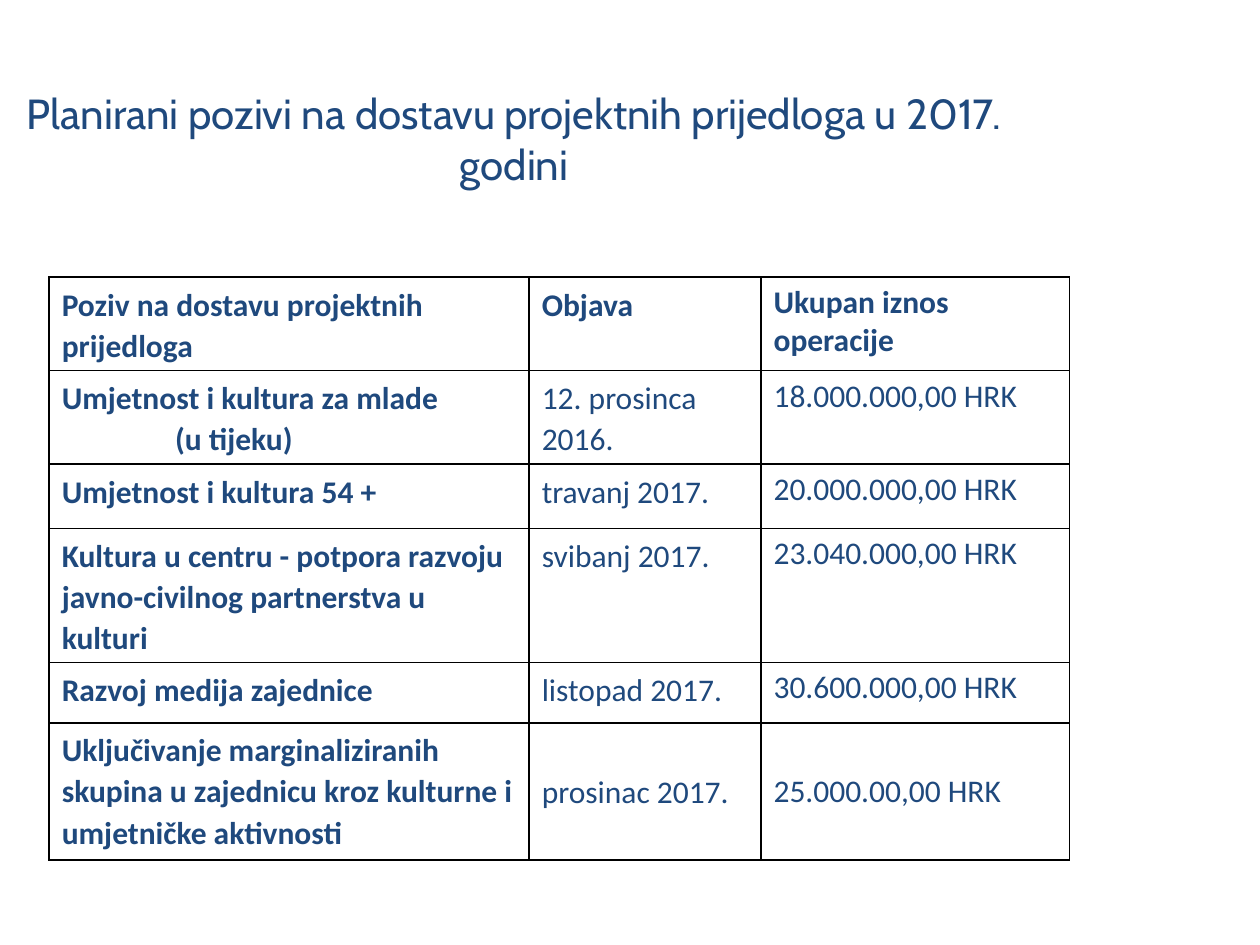
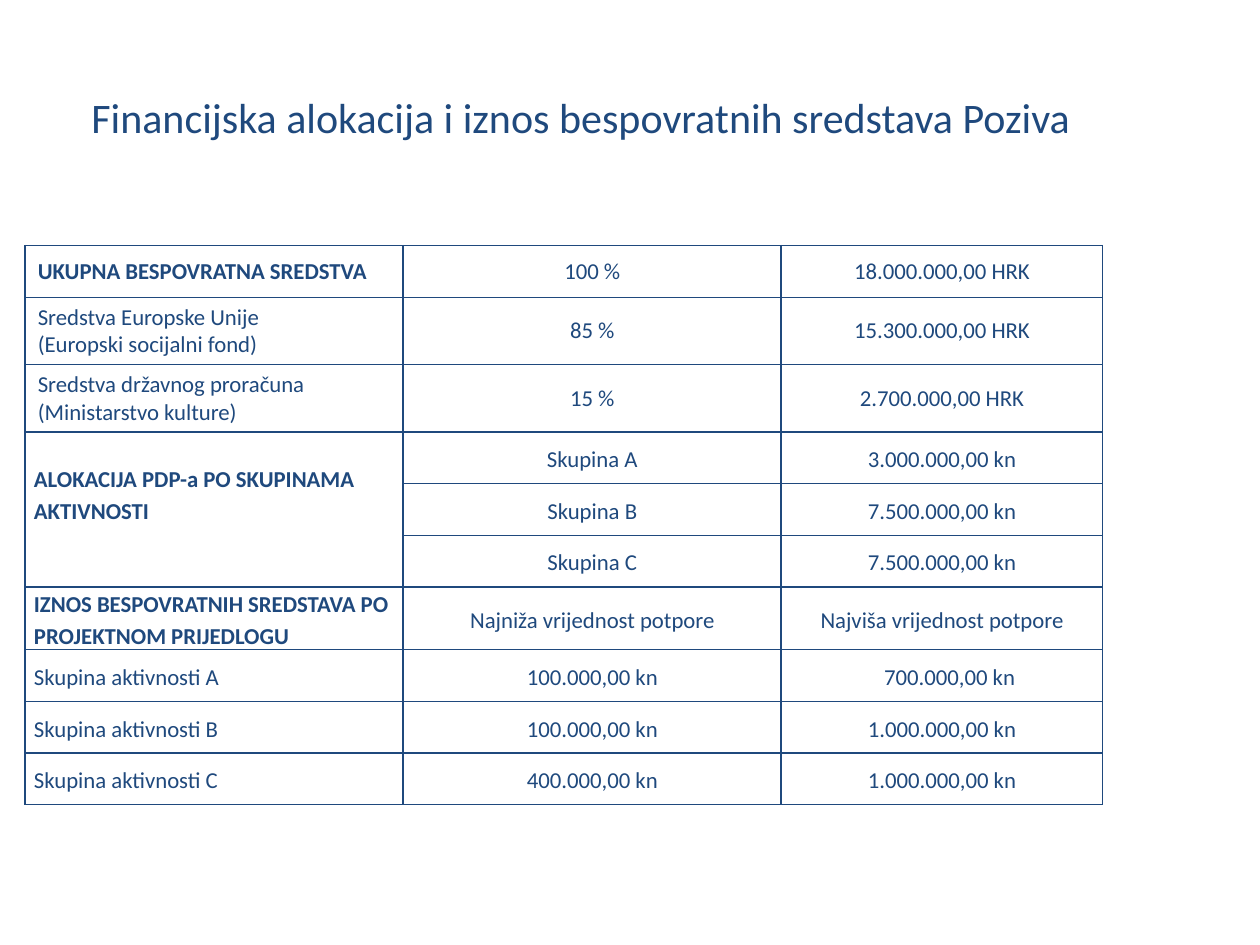
from lxml.etree import SubElement
from pptx import Presentation
from pptx.dml.color import RGBColor
from pptx.enum.text import MSO_ANCHOR as Anchor, PP_ALIGN as Align
from pptx.oxml.ns import qn
from pptx.util import Inches, Pt

COLORS = {"navy": "1F497D", "black": "000000", "white": "FFFFFF"}
GRID_COLUMNS, GRID_ROWS = 100, 75

CALLS = [
    ("Poziv na dostavu projektnih prijedloga", "Objava", "Ukupan iznos operacije"),
    ("Umjetnost i kultura za mlade\n(u tijeku)", "12. prosinca 2016.", "18.000.000,00 HRK"),
    ("Umjetnost i kultura 54 +", "travanj 2017.", "20.000.000,00 HRK"),
    ("Kultura u centru - potpora razvoju javno-civilnog partnerstva u kulturi",
     "svibanj 2017.", "23.040.000,00 HRK"),
    ("Razvoj medija zajednice", "listopad 2017.", "30.600.000,00 HRK"),
    ("Uključivanje marginaliziranih skupina u zajednicu kroz kulturne i umjetničke aktivnosti",
     "prosinac 2017.", "25.000.00,00 HRK"),
]
ALLOCATION = [
    ("UKUPNA BESPOVRATNA SREDSTVA", "100 %", "18.000.000,00 HRK"),
    ("Sredstva Europske Unije\n(Europski socijalni fond)", "85 %", "15.300.000,00 HRK"),
    ("Sredstva državnog proračuna\n(Ministarstvo kulture)", "15 %", "2.700.000,00 HRK"),
    ("ALOKACIJA PDP-a PO SKUPINAMA AKTIVNOSTI", "Skupina A", "3.000.000,00 kn"),
    ("", "Skupina B", "7.500.000,00 kn"),
    ("", "Skupina C", "7.500.000,00 kn"),
    ("IZNOS BESPOVRATNIH SREDSTAVA PO PROJEKTNOM PRIJEDLOGU",
     "Najniža vrijednost potpore", "Najviša vrijednost potpore"),
    ("Skupina aktivnosti A", "100.000,00 kn", "700.000,00 kn"),
    ("Skupina aktivnosti B", "100.000,00 kn", "1.000.000,00 kn"),
    ("Skupina aktivnosti C", "400.000,00 kn", "1.000.000,00 kn"),
]


class Deck:
    def __init__(self):
        self.presentation = Presentation()
        self.presentation.slide_width = Inches(10)
        self.presentation.slide_height = Inches(7.5)
        self.slide = None

    def columns(self, count):
        return round(self.presentation.slide_width * count / GRID_COLUMNS)

    def rows(self, count):
        return round(self.presentation.slide_height * count / GRID_ROWS)

    def new_slide(self):
        self.slide = self.presentation.slides.add_slide(self.presentation.slide_layouts[6])

    def set_text(self, frame, text, size, font="Calibri", bold=False, align=Align.LEFT,
                 spacing=None):
        frame.word_wrap = True
        frame.text = text
        for paragraph in frame.paragraphs:
            paragraph.alignment = align
            paragraph.line_spacing = spacing
            for run in paragraph.runs:
                run.font.name, run.font.size, run.font.bold = font, Pt(size), bold
                run.font.color.rgb = RGBColor.from_string(COLORS["navy"])

    def title(self, text, left, top, width, font):
        box = self.slide.shapes.add_textbox(
            self.columns(left), self.rows(top), self.columns(width), self.rows(12.5))
        box.text_frame.vertical_anchor = Anchor.MIDDLE
        self.set_text(box.text_frame, text, 24, font, align=Align.CENTER)

    def table(self, left, top, widths, heights, border):
        table = self.slide.shapes.add_table(
            len(heights), len(widths), self.columns(left), self.rows(top),
            self.columns(sum(widths)), self.rows(sum(heights))).table
        table.first_row = table.horz_banding = False
        for column, width in zip(table.columns, widths):
            column.width = self.columns(width)
        for row, height in zip(table.rows, heights):
            row.height = self.rows(height)
        for cell in table.iter_cells():
            self.outline(cell, border)
            cell.fill.solid()
            cell.fill.fore_color.rgb = RGBColor.from_string(COLORS["white"])
        return table

    def outline(self, cell, color):
        properties = cell._tc.get_or_add_tcPr()
        for side in ("a:lnL", "a:lnR", "a:lnT", "a:lnB"):
            line = SubElement(properties, qn(side), w=str(Pt(1)))
            SubElement(SubElement(line, qn("a:solidFill")), qn("a:srgbClr"), val=COLORS[color])

    def indent(self, paragraph, count):
        paragraph._p.get_or_add_pPr().set("marL", str(self.columns(count)))


def planned_calls(deck):
    deck.new_slide()
    deck.title("Planirani pozivi na dostavu projektnih prijedloga u 2017. godini",
               0, 4.7, 81.6, "Cabin")
    table = deck.table(3.9, 22, (38.1, 18.4, 24.5), (6.7, 6.7, 5.1, 7.9, 4.8, 10.9), "black")
    for r, call in enumerate(CALLS):
        for c, text in enumerate(call):
            deck.set_text(table.cell(r, c).text_frame, text, 18, bold=r == 0 or c == 0,
                          spacing=1.07 if c < 2 else None)
    deck.indent(table.cell(1, 0).text_frame.paragraphs[1], 9)
    for c in (1, 2):
        table.cell(len(CALLS) - 1, c).vertical_anchor = Anchor.MIDDLE


def allocation(deck):
    deck.new_slide()
    deck.title("Financijska alokacija i iznos bespovratnih sredstava Poziva",
               1.1, 3, 90, "Calibri")
    table = deck.table(2, 19.5, (30, 30, 25.5), [4.1] * len(ALLOCATION), "navy")
    first_group, heading_rows = 3, (0, 3, 6)
    table.cell(first_group, 0).merge(table.cell(first_group + 2, 0))
    for r, entry in enumerate(ALLOCATION):
        for c, text in enumerate(entry):
            cell = table.cell(r, c)
            cell.vertical_anchor = Anchor.MIDDLE
            if r >= first_group:
                cell.margin_left = cell.margin_right = deck.columns(0.7)
                cell.margin_top = cell.margin_bottom = 0
            if text:
                deck.set_text(cell.text_frame, text, 13, bold=c == 0 and r in heading_rows,
                              align=Align.CENTER if c else Align.LEFT,
                              spacing=1.15 if r >= first_group else None)
    table.cell(first_group, 0).margin_bottom = deck.rows(2.5)
    table.cell(7, 2).margin_left = deck.columns(1.9)


def main():
    deck = Deck()
    planned_calls(deck)
    allocation(deck)
    deck.presentation.save("out.pptx")


if __name__ == "__main__":
    main()
